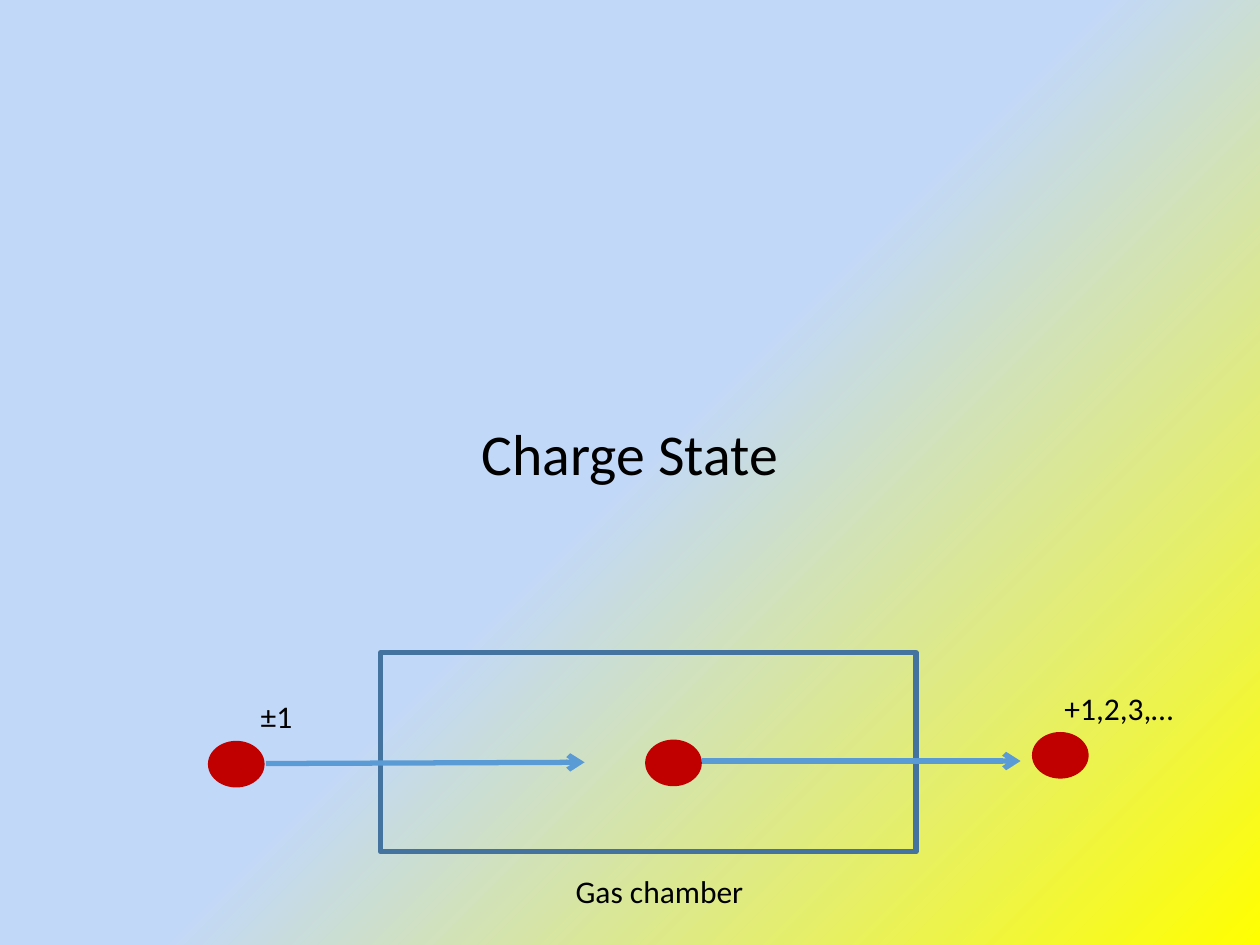
"""Build a slide showing how the charge state changes in a gas chamber."""
from lxml import etree
from pptx import Presentation
from pptx.dml.color import RGBColor
from pptx.enum.shapes import MSO_CONNECTOR, MSO_SHAPE
from pptx.enum.text import MSO_ANCHOR, MSO_AUTO_SIZE, PP_ALIGN
from pptx.oxml.ns import qn
from pptx.util import Inches, Pt

STRAIGHT = MSO_CONNECTOR.STRAIGHT
RECTANGLE = MSO_SHAPE.RECTANGLE
OVAL = MSO_SHAPE.OVAL
MIDDLE = MSO_ANCHOR.MIDDLE
GROW = MSO_AUTO_SIZE.SHAPE_TO_FIT_TEXT
CENTER = PP_ALIGN.CENTER

FONT = "Calibri"
TITLE_ONLY = 5
LINE_WIDTH = 3
ION_SIZE = (0.45, 0.37)
IONS = [(1.65, 5.88), (5.12, 5.87), (8.19, 5.81)]
ARROWS = [(2.11, 6.06, 4.64, 6.05), (5.57, 6.04, 8.1, 6.04)]
LABELS = [
    ("Gas chamber", 4.47, 6.87, 1.55),
    ("+1,2,3,…", 8.35, 5.42, 1.14),
    ("±1", 1.97, 5.48, 0.65),
]


def color(value):
    """Turn a hex string into a colour."""
    return RGBColor.from_string(value)


def set_background(slide):
    """Fill the background with a diagonal blue to yellow gradient."""
    fill = slide.background.fill
    fill.gradient()
    fill.gradient_angle = 315
    stops = [(0.5, "C2D8F8"), (1.0, "FFFF00")]
    for stop, (position, value) in zip(fill.gradient_stops, stops):
        stop.position = position
        stop.color.rgb = color(value)


def style_text(para, size):
    """Set the font of a paragraph."""
    para.font.name = FONT
    para.font.size = Pt(size)
    para.font.color.rgb = color("000000")


def set_title(slide, text):
    """Place and format the title."""
    title = slide.shapes.title
    title.left, title.top = Inches(0.69), Inches(2.9)
    title.width, title.height = Inches(8.62), Inches(1.45)
    frame = title.text_frame
    frame.text = text
    frame.vertical_anchor = MIDDLE
    para = frame.paragraphs[0]
    para.alignment = CENTER
    para.line_spacing = 0.9
    style_text(para, 33)


def add_chamber(slide):
    """Draw the open outline of the gas chamber."""
    chamber = slide.shapes.add_shape(
        RECTANGLE, Inches(3.02), Inches(5.18), Inches(4.25), Inches(1.58))
    chamber.shadow.inherit = False
    chamber.fill.background()
    chamber.line.color.rgb = color("43739E")
    chamber.line.width = Pt(LINE_WIDTH)


def add_ion(slide, left, top):
    """Draw one ion as a red oval."""
    width, height = ION_SIZE
    ion = slide.shapes.add_shape(
        OVAL, Inches(left), Inches(top), Inches(width), Inches(height))
    ion.shadow.inherit = False
    ion.fill.solid()
    ion.fill.fore_color.rgb = color("C00000")
    ion.line.fill.background()


def add_arrow(slide, *ends):
    """Draw a straight arrow from start to end."""
    arrow = slide.shapes.add_connector(STRAIGHT, *map(Inches, ends))
    arrow.line.color.rgb = color("5B9BD5")
    arrow.line.width = Pt(LINE_WIDTH)
    etree.SubElement(arrow.line._get_or_add_ln(), qn("a:tailEnd"), type="arrow")
    etree.SubElement(arrow._element.spPr, qn("a:effectLst"))


def add_label(slide, text, left, top, width):
    """Add a line of text in a box that fits it."""
    box = slide.shapes.add_textbox(
        Inches(left), Inches(top), Inches(width), Inches(0.4))
    frame = box.text_frame
    frame.word_wrap = True
    frame.auto_size = GROW
    frame.text = text
    style_text(frame.paragraphs[0], 18)


def main():
    """Build and save the deck."""
    deck = Presentation()
    deck.slide_width, deck.slide_height = Inches(10), Inches(7.5)
    slide = deck.slides.add_slide(deck.slide_layouts[TITLE_ONLY])
    set_background(slide)
    set_title(slide, "Charge State")
    add_chamber(slide)
    for ion in IONS:
        add_ion(slide, *ion)
    for arrow in ARROWS:
        add_arrow(slide, *arrow)
    for label in LABELS:
        add_label(slide, *label)
    deck.save("out.pptx")


if __name__ == "__main__":
    main()
